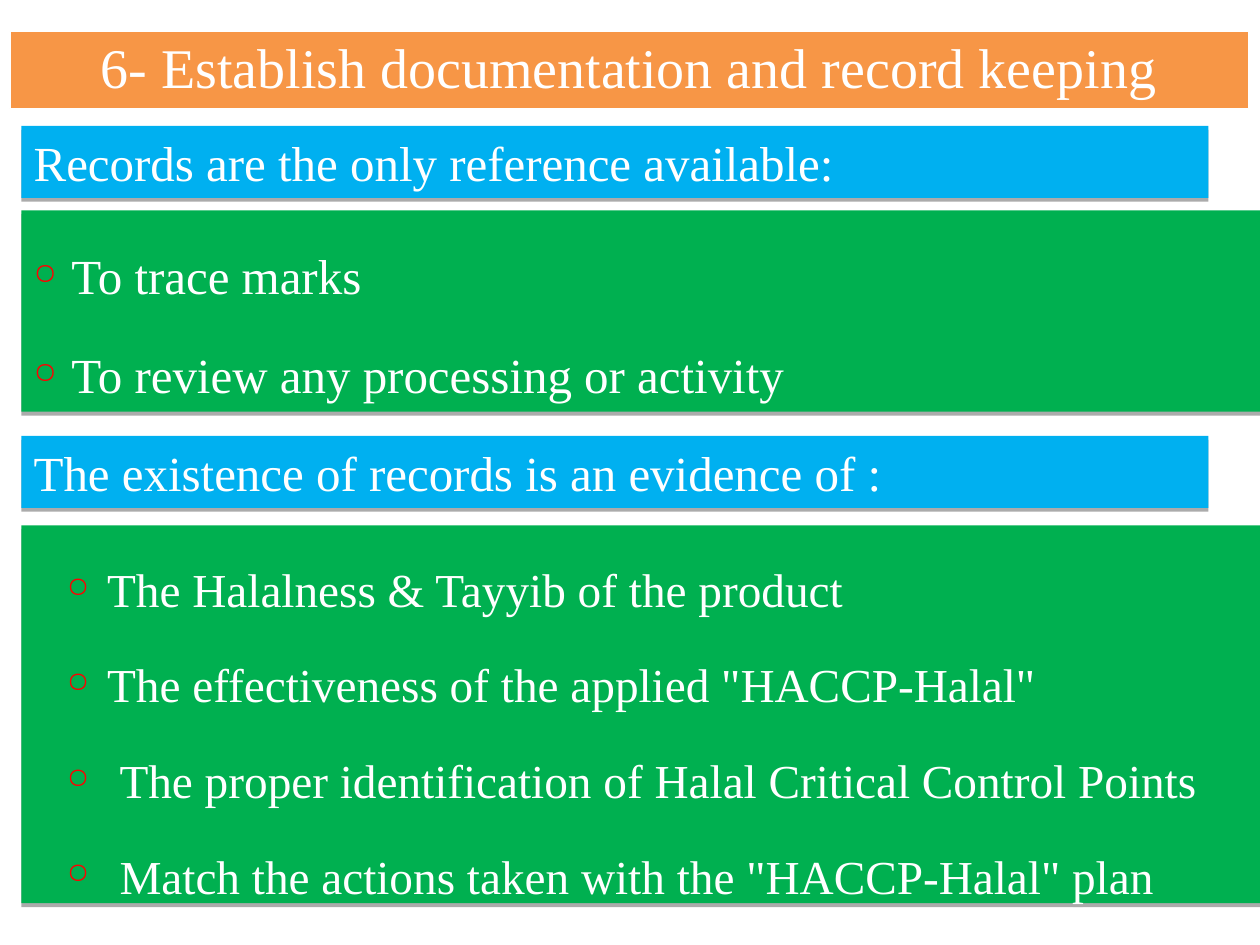
from dataclasses import dataclass

from lxml import etree
from pptx import Presentation
from pptx.dml.color import RGBColor
from pptx.enum.shapes import MSO_SHAPE
from pptx.enum.text import MSO_ANCHOR, MSO_AUTO_SIZE, PP_ALIGN
from pptx.oxml.ns import qn
from pptx.util import Cm, Pt

RECTANGLE = MSO_SHAPE.RECTANGLE
TOP = MSO_ANCHOR.TOP
GROW = MSO_AUTO_SIZE.SHAPE_TO_FIT_TEXT
CENTER, JUSTIFY = PP_ALIGN.CENTER, PP_ALIGN.JUSTIFY

FONT = "Times New Roman"
WHITE, ORANGE, BLUE, GREEN, RED = "FFFFFF", "F79646", "00B0F0", "00B050", "FF0000"
LEFT = 0.43
HEADING_WIDTH, LIST_WIDTH = 23.93, 24.97


@dataclass
class Item:
    text: str
    bullet_at: float  # cm from the text edge
    text_at: float


@dataclass
class Heading:
    text: str
    top: float


@dataclass
class BulletList:
    items: list[Item]
    top: float
    height: float
    size: float


HEADINGS = [
    Heading("Records are the only reference available:", 2.54),
    Heading("The existence of records is an evidence of :", 8.79),
]
LISTS = [
    BulletList([
        Item("To trace marks", 0, 0.76),
        Item("To review any processing or activity", 0, 0.76),
    ], 4.24, 4.06, 28),
    BulletList([
        Item("The Halalness & Tayyib of the product", 0.67, 1.48),
        Item('The effectiveness of the applied "HACCP-Halal"', 0.67, 1.48),
        Item("The proper identification of Halal Critical Control Points", 0.67, 1.73),
        Item('Match the actions taken with the "HACCP-Halal" plan', 0.67, 1.73),
    ], 10.59, 7.62, 27),
]


def color(value: str) -> RGBColor:
    return RGBColor.from_string(value)


def add_box(page, left: float, top: float, width: float, height: float, fill: str):
    box = page.shapes.add_shape(RECTANGLE, Cm(left), Cm(top), Cm(width), Cm(height))
    box.shadow.inherit = False
    box.fill.solid()
    box.fill.fore_color.rgb = color(fill)
    box.line.fill.background()
    frame = box.text_frame
    frame.word_wrap = True
    frame.auto_size = GROW
    frame.vertical_anchor = TOP
    return box


def write(para, text: str, size: float, alignment) -> None:
    para.text = text
    para.alignment = alignment
    para.font.name = FONT
    para.font.size = Pt(size)
    para.font.color.rgb = color(WHITE)


def add_shadow(box) -> None:
    effects = box._element.spPr.find(qn("a:effectLst"))
    shadow = etree.SubElement(effects, qn("a:outerShdw"), blurRad="0",
                              dist=str(Pt(2.2)), dir="5400000", rotWithShape="0")
    black = etree.SubElement(shadow, qn("a:srgbClr"), val="000000")
    etree.SubElement(black, qn("a:alpha"), val="32000")


def add_bullet(para, item: Item) -> None:
    properties = para._p.get_or_add_pPr()
    properties.set("marL", str(Cm(item.text_at)))
    properties.set("indent", str(Cm(item.bullet_at - item.text_at)))
    bullet_color = etree.Element(qn("a:buClr"))
    etree.SubElement(bullet_color, qn("a:srgbClr"), val=RED)
    bullet_size = etree.Element(qn("a:buSzPct"), val="60000")
    bullet_char = etree.Element(qn("a:buChar"), char="○")
    # Bullet parts must stand before the default run properties
    defaults = properties.find(qn("a:defRPr"))
    for part in (bullet_color, bullet_size, bullet_char):
        defaults.addprevious(part)


def add_title(page, text: str) -> None:
    box = add_box(page, 0.2, 0.64, 24.97, 1.55, ORANGE)
    box.line.color.rgb = color(WHITE)
    box.line.width = Pt(0.75)
    para = box.text_frame.paragraphs[0]
    write(para, text, 32, CENTER)
    para.line_spacing = 0.95


def add_heading(page, heading: Heading) -> None:
    box = add_box(page, LEFT, heading.top, HEADING_WIDTH, 1.45, BLUE)
    add_shadow(box)
    write(box.text_frame.paragraphs[0], heading.text, 28, JUSTIFY)


def add_list(page, bullets: BulletList) -> None:
    box = add_box(page, LEFT, bullets.top, LIST_WIDTH, bullets.height, GREEN)
    add_shadow(box)
    frame = box.text_frame
    for index, item in enumerate(bullets.items):
        para = frame.add_paragraph() if index else frame.paragraphs[0]
        write(para, item.text, bullets.size, JUSTIFY)
        para.level = 1
        para.line_spacing = 1.5
        para.space_before = Pt(6)
        add_bullet(para, item)


def main() -> None:
    deck = Presentation()
    deck.slide_width, deck.slide_height = Cm(25.4), Cm(19.05)
    page = deck.slides.add_slide(deck.slide_layouts[6])

    # Title bar
    add_title(page, "6- Establish documentation and record keeping")

    # Each heading with its list below
    for heading, bullets in zip(HEADINGS, LISTS):
        add_heading(page, heading)
        add_list(page, bullets)

    deck.save("out.pptx")


if __name__ == "__main__":
    main()
